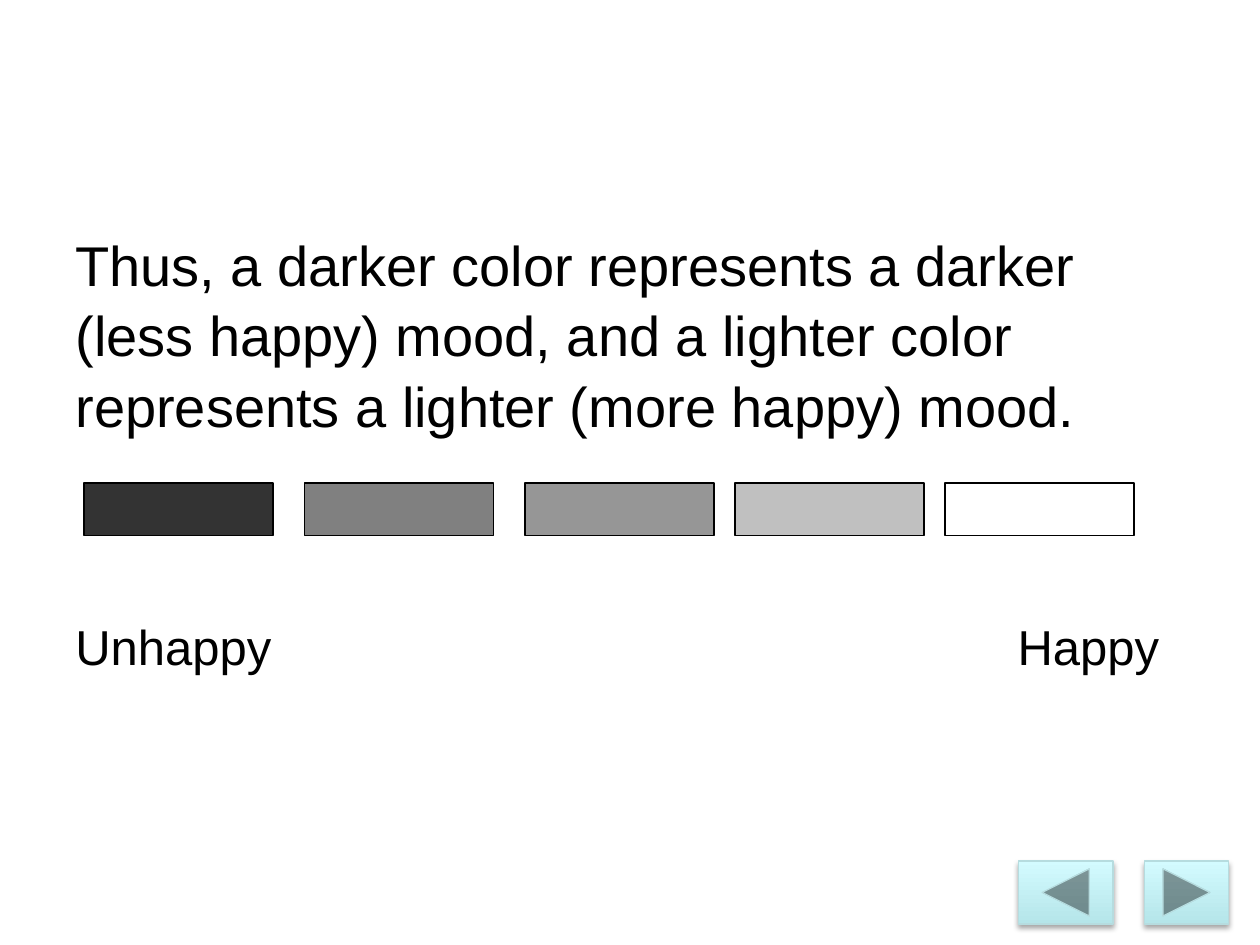
from lxml.etree import SubElement
from pptx import Presentation
from pptx.dml.color import RGBColor
from pptx.enum.shapes import MSO_SHAPE
from pptx.oxml.ns import qn
from pptx.util import Inches, Pt

BLACK = RGBColor(0x00, 0x00, 0x00)
BUTTON_BOTTOM = RGBColor(0xB5, 0xE5, 0xE9)
BUTTON_TOP = RGBColor(0xD3, 0xFB, 0xFF)
BUTTON_EDGE = RGBColor(0xB6, 0xDC, 0xDF)
# Left column of each mood swatch, from unhappy to happy
SWATCHES = [
    (8, RGBColor(0x33, 0x33, 0x33)),
    (29, RGBColor(0x80, 0x80, 0x80)),
    (50, RGBColor(0x96, 0x96, 0x96)),
    (70, RGBColor(0xC0, 0xC0, 0xC0)),
    (90, RGBColor(0xFF, 0xFF, 0xFF)),
]
FONT = "Arial"


def grid(*cells):
    """Turn grid cells, twelve to the inch, into lengths."""
    return [Inches(cell / 12) for cell in cells]


def add_outlined_shape(page, kind, cells, edge):
    shape = page.shapes.add_shape(kind, *grid(*cells))
    shape.shadow.inherit = False
    shape.line.color.rgb = edge
    shape.line.width = Pt(0.75)
    return shape


def add_swatch(page, column, color):
    swatch = add_outlined_shape(page, MSO_SHAPE.RECTANGLE, (column, 46, 18, 5), BLACK)
    swatch.fill.solid()
    swatch.fill.fore_color.rgb = color


def add_soft_shadow(shape):
    effects = shape._element.spPr.find(qn("a:effectLst"))
    shadow = SubElement(effects, qn("a:outerShdw"), blurRad=str(Pt(3.1)),
                        dist=str(Pt(1.8)), dir="5400000", rotWithShape="0")
    color = SubElement(shadow, qn("a:srgbClr"), val="000000")
    SubElement(color, qn("a:alpha"), val="35000")


def add_button(page, kind, column, columns):
    button = add_outlined_shape(page, kind, (column, 82, columns, 6), BUTTON_EDGE)
    button.fill.gradient()
    button.fill.gradient_angle = 90
    for stop, color in zip(button.fill.gradient_stops, (BUTTON_BOTTOM, BUTTON_TOP)):
        stop.color.rgb = color
    add_soft_shadow(button)


def add_span(para, text, size):
    span = para.add_run()
    span.text = text
    span.font.name = FONT
    span.font.size = Pt(size)
    span.font.color.rgb = BLACK


def add_mood_text(page):
    """Add the statement, and the scale labels at both ends of one line."""
    frame = page.shapes.add_textbox(*grid(6, 21, 108, 59.4)).text_frame
    frame.word_wrap = True
    statement = frame.paragraphs[0]
    statement.line_spacing = 1.05
    add_span(statement, "Thus, a darker color represents a darker (less happy) mood, "
                        "and a lighter color represents a lighter (more happy) mood.", 32)

    labels = frame.add_paragraph()
    tabs = SubElement(labels._p.get_or_add_pPr(), qn("a:tabLst"))
    SubElement(tabs, qn("a:tab"), pos=str(Inches(8.6)), algn="r")
    labels.line_spacing = 1.05
    labels.space_before = Pt(100)
    for text in ("Unhappy", "\t", "Happy"):
        add_span(labels, text, 28)


def main():
    deck = Presentation()
    deck.slide_width, deck.slide_height = Inches(10), Inches(7.5)
    page = deck.slides.add_slide(deck.slide_layouts[6])
    add_button(page, MSO_SHAPE.ACTION_BUTTON_FORWARD_OR_NEXT, 109, 8)
    add_button(page, MSO_SHAPE.ACTION_BUTTON_BACK_OR_PREVIOUS, 97, 9)
    add_mood_text(page)
    for column, color in SWATCHES:
        add_swatch(page, column, color)
    deck.save("out.pptx")


if __name__ == "__main__":
    main()
